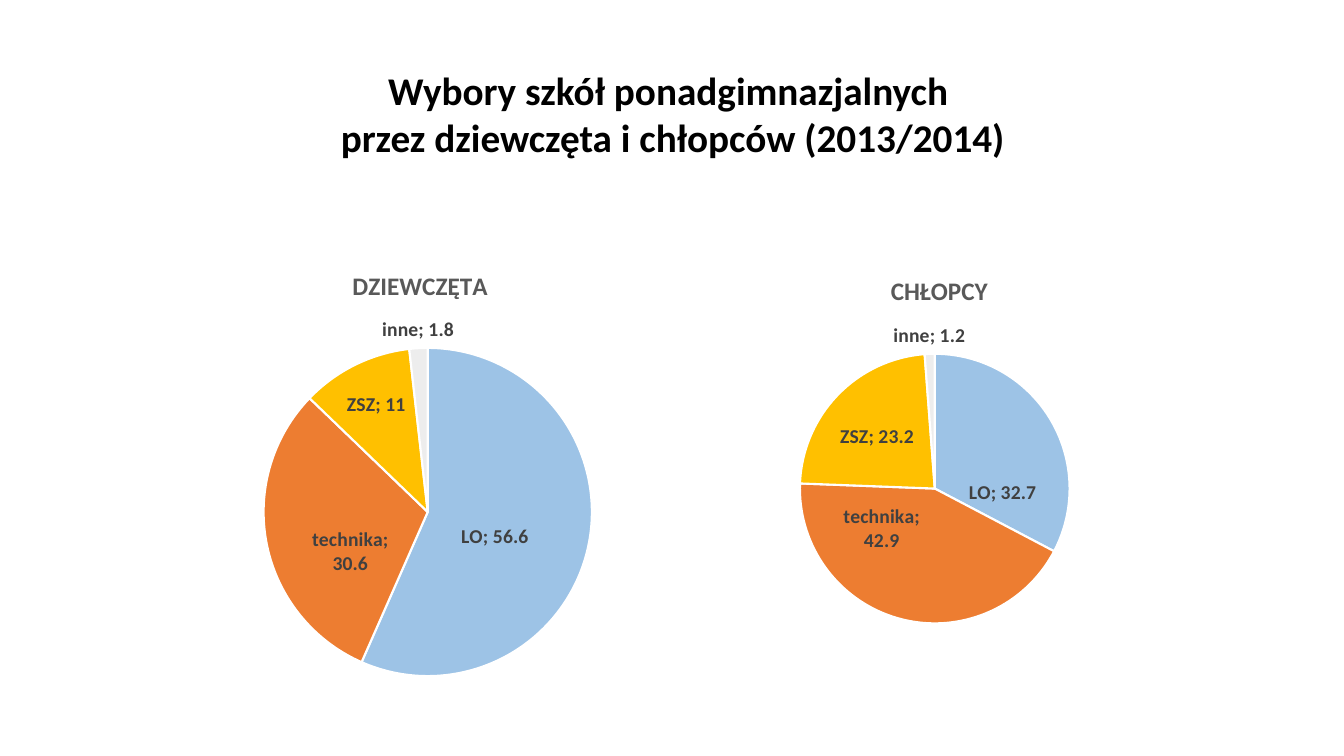
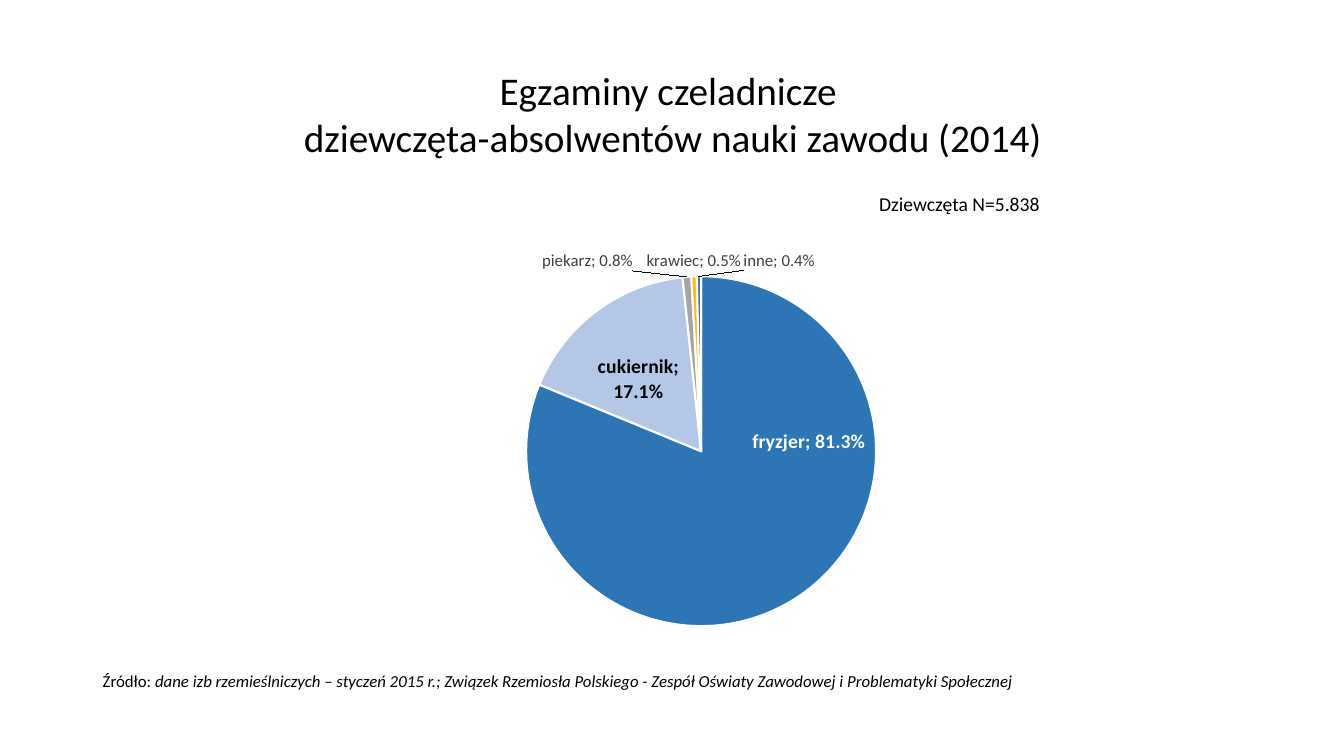
from lxml.etree import SubElement
from pptx import Presentation
from pptx.chart.data import CategoryChartData
from pptx.dml.color import RGBColor
from pptx.enum.chart import XL_CHART_TYPE, XL_LABEL_POSITION
from pptx.enum.text import MSO_ANCHOR, MSO_AUTO_SIZE, PP_ALIGN
from pptx.oxml import parse_xml
from pptx.oxml.ns import nsdecls, qn
from pptx.util import Pt

PX = 9144  # 100 px to the inch
FONT = "Calibri"
BLACK, WHITE, GREY, DARK = "000000", "FFFFFF", "595959", "404040"


def px(*nums):
    return [n * PX for n in nums]


def color(code):
    return RGBColor.from_string(code)


def style(font, size, code, bold=False, italic=False):
    font.name, font.size = FONT, Pt(size)
    font.bold, font.italic = bold, italic
    font.color.rgb = color(code)


def place(node, spot, inner=False, **parts):
    """Give a chart part a manual layout, as child number spot."""
    for old in node.findall(qn("c:layout")):
        node.remove(old)
    layout = parse_xml(f"<c:layout {nsdecls('c')}/>")
    manual = SubElement(layout, qn("c:manualLayout"))
    if inner:
        SubElement(manual, qn("c:layoutTarget")).set("val", "inner")
    if node.tag != qn("c:dLbl"):
        for axis in "xy":
            SubElement(manual, qn(f"c:{axis}Mode")).set("val", "edge")
    for key, val in parts.items():
        SubElement(manual, qn(f"c:{key}")).set("val", str(val))
    node.insert(spot, layout)


def split(node):
    """Show category and value, parted by a semicolon."""
    node.find(qn("c:showCatName")).set("val", "1")
    mark = parse_xml(f"<c:separator {nsdecls('c')}>; </c:separator>")
    node.find(qn("c:showBubbleSize")).addnext(mark)


class Deck:
    def __init__(self):
        self.prs = Presentation()
        self.prs.slide_width, self.prs.slide_height = px(1333, 750)

    def slide(self, lines, bold=False):
        self.page = self.prs.slides.add_slide(self.prs.slide_layouts[5])
        title = self.page.shapes.title
        title.left, title.top, title.width, title.height = px(92, 40, 1150, 145)
        frame = title.text_frame
        frame.auto_size = MSO_AUTO_SIZE.NONE
        frame.word_wrap = True
        frame.vertical_anchor = MSO_ANCHOR.MIDDLE
        para = frame.paragraphs[0]
        para.alignment = PP_ALIGN.CENTER
        for i, line in enumerate(lines):
            if i:
                para.add_line_break()
            run = para.add_run()
            run.text = line
            style(run.font, 28, BLACK, bold)

    def text(self, box, size, *runs):
        """Each run is a pair of text and italic flag."""
        frame = self.page.shapes.add_textbox(*px(*box)).text_frame
        frame.word_wrap = False
        para = frame.paragraphs[0]
        for words, italic in runs:
            run = para.add_run()
            run.text = words
            style(run.font, size, BLACK, italic=italic)

    def pie(self, box, plot, data, fills, labels, size=14, bold=True,
            fmt="General", title=None, lead=False):
        """Labels map a slice number to its colour, size, weight and shift."""
        source = CategoryChartData(number_format=fmt)
        source.categories = list(data)
        source.add_series("Series 1", list(data.values()))
        chart = self.page.shapes.add_chart(
            XL_CHART_TYPE.PIE, *px(*box), source).chart
        chart.has_legend = False
        style(chart.font, 10, BLACK)
        self.head(chart, title)
        x, y, w, h = plot
        place(chart.plots[0]._element.getparent(), 0, True, x=x, y=y, w=w, h=h)
        chart.plots[0].vary_by_categories = True

        series = chart.plots[0].series[0]
        for i, fill in enumerate(fills):
            form = series.points[i].format
            form.fill.solid()
            form.fill.fore_color.rgb = color(fill)
            form.line.color.rgb = color(WHITE)
            form.line.width = Pt(1.5)

        tags = series.data_labels
        tags.show_value = True
        tags.number_format = fmt
        tags.number_format_is_linked = False
        tags.position = XL_LABEL_POSITION.OUTSIDE_END
        style(tags.font, size, DARK, bold)
        split(tags._element)
        for node in tags._element.xpath("c:showLeaderLines"):
            node.set("val", str(int(lead)))
        for i, (code, points, heavy, shift) in labels.items():
            tag = series.points[i].data_label
            style(tag.font, points, code, heavy)
            tag.position = XL_LABEL_POSITION.OUTSIDE_END
        for node, label in zip(tags._element.xpath("c:dLbl"), labels.values()):
            split(node)
            place(node, 1, x=label[3][0], y=label[3][1])

    def head(self, chart, title):
        chart.has_title = title is not None
        if title:
            words, x, y = title
            run = chart.chart_title.text_frame.paragraphs[0].add_run()
            run.text = words
            style(run.font, 18, GREY, True)
            place(chart.chart_title._element, 1, x=x, y=y)


def main():
    deck = Deck()
    deck.slide(["Wybory szkół ponadgimnazjalnych ",
                "przez dziewczęta i chłopców (2013/2014)"], bold=True)
    kinds = ["LO", "technika", "ZSZ", "inne"]
    fills = ["9DC3E6", "ED7D31", "FFC000", "EDEDED"]
    pies = [
        ((665, 245, 535, 440), (0.24, 0.24, 0.5, 0.61),
         (32.7, 42.9, 23.2, 1.2), ("CHŁOPCY", 0.4, 0.05),
         [(-0.16, 0.2), (0.04, -0.27), (0.15, 0.13)]),
        ((155, 244, 528, 440), (0.2, 0.23, 0.62, 0.74),
         (56.6, 30.6, 11, 1.8), ("DZIEWCZĘTA", 0.36, 0.04),
         [(-0.25, -0.05), (0.24, -0.04), (0.1, 0.13)]),
    ]
    for box, plot, vals, title, shifts in pies:
        labels = {i: (DARK, 14, True, s) for i, s in enumerate(shifts)}
        deck.pie(box, plot, dict(zip(kinds, vals)), fills, labels, title=title)

    deck.slide(["Egzaminy czeladnicze ",
                "dziewczęta-absolwentów nauki zawodu (2014)"])
    trades = {"fryzjer": 0.813, "cukiernik": 0.171, "piekarz": 0.008,
              "krawiec": 0.005, "inne": 0.004}
    labels = {0: (WHITE, 14, True, (-0.08, -0.32)),
              1: (BLACK, 14, True, (0.14, 0.18)),
              2: (DARK, 12, False, (-0.16, 0)),
              4: (DARK, 12, False, (0.13, 0))}
    deck.pie((392, 162, 613, 534), (0.21, 0.21, 0.57, 0.65), trades,
             ["2E75B6", "B4C7E7", "A5A5A5", "FFC000", "4472C4"], labels,
             size=12, bold=False, fmt="0.0%", lead=True)
    deck.text((92, 661, 933, 50), 12, ("Źródło: ", False),
              ("dane izb rzemieślniczych – styczeń 2015 r.; Związek Rzemiosła "
               "Polskiego - Zespół Oświaty Zawodowej i Problematyki Społecznej",
               True))
    deck.text((862, 185, 181, 34), 14, ("Dziewczęta N=5.838", False))
    deck.prs.save("out.pptx")


if __name__ == "__main__":
    main()
